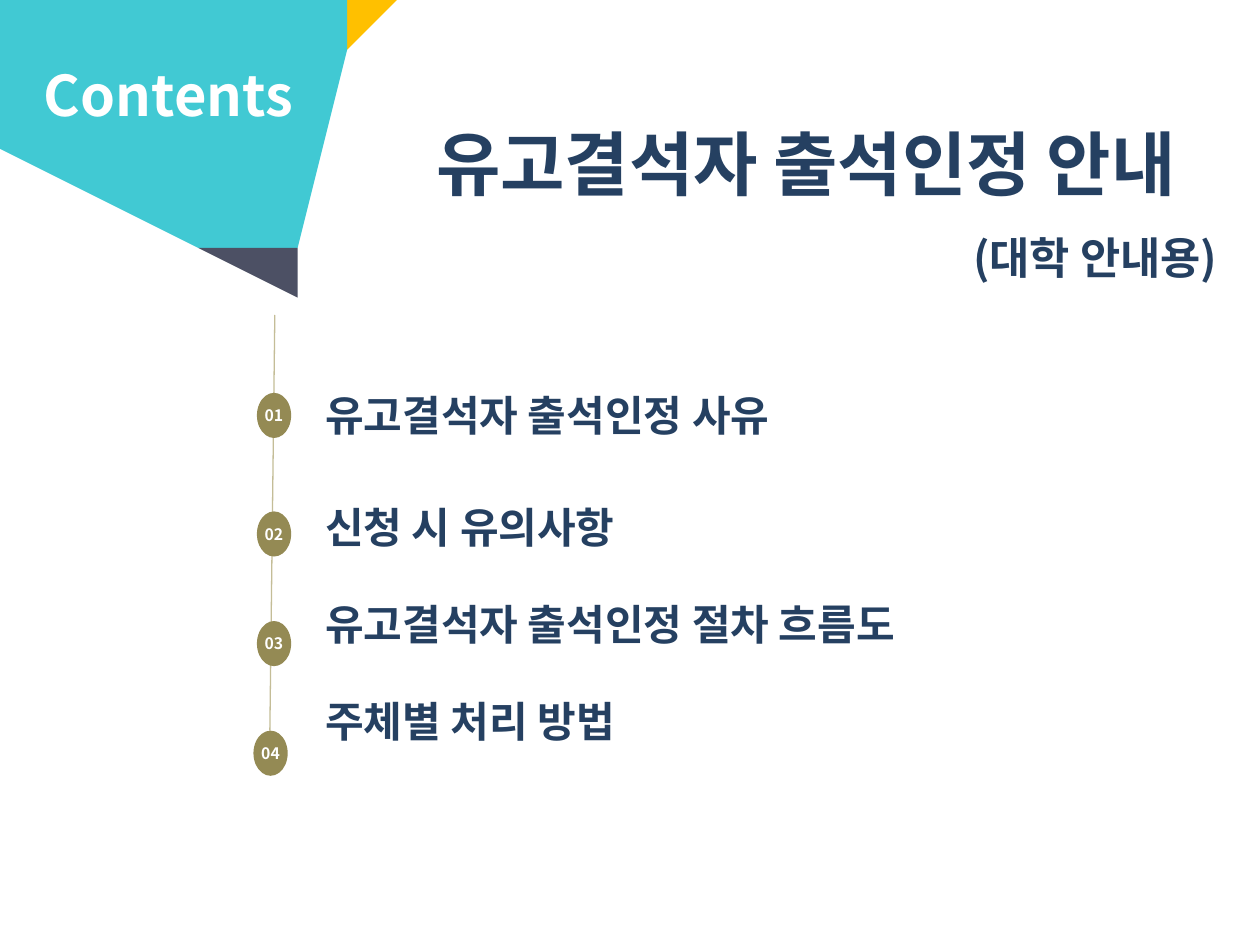
from lxml.etree import SubElement
from pptx import Presentation
from pptx.dml.color import RGBColor as RGB
from pptx.enum.shapes import MSO_CONNECTOR as Conn, MSO_SHAPE as Shape
from pptx.enum.text import MSO_ANCHOR as Anchor, MSO_AUTO_SIZE as Auto, PP_ALIGN as Align
from pptx.oxml.ns import qn
from pptx.util import Cm, Pt

# Content
HEAD = "Contents"
TITLE = "유고결석자 출석인정 안내"
NOTE = "(대학 안내용)"
# text, top of the text line, left and top of its badge (cm)
ITEMS = [
    ("유고결석자 출석인정 사유", 7.72, 5.18, 7.92),
    ("신청 시 유의사항", 10.19, 5.18, 10.31),
    ("유고결석자 출석인정 절차 흐름도", 12.37, 5.18, 12.52),
    ("주체별 처리 방법", 14.53, 5.11, 14.73),
]
# colour key, corner points (cm)
FACETS = [
    ("gold", [(6.65, 0), (7.62, 0), (7.19, 1.27)]),
    ("teal", [(0, 0), (6.53, 0), (7.14, 1.42), (5.87, 5.33), (3.73, 5.33), (0, 3.18)]),
    ("slate", [(3.96, 5.46), (5.84, 5.46), (5.54, 6.35)]),
]

THEME = {
    "gold": "FFC000", "teal": "41C9D3", "slate": "4C5064", "sand": "C4BD97",
    "olive": "948A54", "navy": "254061", "white": "FFFFFF",
    "font": "Noto Sans CJK KR", "plain": "Arial",
    "title": 40, "head": 32, "note": 25, "item": 24, "badge": 9,
}
ROW = 1.23  # height of one list line, cm
BADGE = (0.69, 0.91)


def color(key):
    return RGB.from_string(THEME[key])


def write(para, text, size, tone="navy", font="font", align=Align.LEFT, line=1.0, gap=0):
    """Put formatted text, without a bullet, in a paragraph."""
    para.alignment, para.line_spacing = align, line
    para.space_before, para.space_after = Cm(gap), Cm(0)
    prop = para._p.get_or_add_pPr()
    prop.set("marL", "0")
    prop.set("indent", "0")
    SubElement(prop, qn("a:buNone"))
    run = para.add_run()
    run.text = text
    face = run.font
    face.size, face.bold, face.name = Pt(THEME[size]), True, THEME[font]
    face.color.rgb = color(tone)
    if font == "font":
        SubElement(run._r.get_or_add_rPr(), qn("a:ea"), typeface=THEME[font])


def place(shape, left, top, width, height):
    shape.left, shape.top = Cm(left), Cm(top)
    shape.width, shape.height = Cm(width), Cm(height)
    frame = shape.text_frame
    frame.word_wrap, frame.auto_size = True, Auto.NONE
    frame.vertical_anchor = Anchor.TOP
    return frame


def paint(shape, key):
    shape.shadow.inherit = False
    shape.fill.solid()
    shape.fill.fore_color.rgb = color(key)
    shape.line.fill.background()


def main():
    deck = Presentation()
    deck.slide_width, deck.slide_height = Cm(25.4), Cm(19.05)
    slide = deck.slides.add_slide(deck.slide_layouts[1])
    shapes = slide.shapes

    # Guide line behind the badges
    guide = shapes.add_connector(Conn.STRAIGHT, Cm(5.54), Cm(6.35), Cm(5.44), Cm(14.73))
    guide.line.color.rgb = color("sand")
    guide.line.width = Pt(0.75)
    SubElement(guide._element.spPr, qn("a:effectLst"))

    # Corner facets
    group = shapes.add_group_shape()
    for key, points in FACETS:
        pen = group.shapes.build_freeform(*points[0], scale=Cm(1))
        pen.add_line_segments(points[1:], close=True)
        paint(pen.convert_to_shape(), key)

    # Heading on the facet
    frame = place(shapes.add_textbox(0, 0, 0, 0), 0.1, 1.09, 6.6, 1.63)
    write(frame.paragraphs[0], HEAD, "head", tone="white", align=Align.CENTER)

    # Title
    frame = place(shapes.title, 7.7, 1.45, 17.09, 4.67)
    write(frame.paragraphs[0], TITLE, "title", align=Align.CENTER, line=1.5)
    write(frame.add_paragraph(), NOTE, "note", align=Align.RIGHT, line=1.5)

    # List and numbered badges
    start = ITEMS[0][1]
    frame = place(slide.placeholders[1], 6.3, start, 18.21, ITEMS[-1][1] - start + 1.5)
    last = start - ROW
    for num, (text, top, left, high) in enumerate(ITEMS, 1):
        para = frame.paragraphs[0] if num == 1 else frame.add_paragraph()
        write(para, text, "item", font="plain", gap=top - last - ROW)
        last = top

        badge = shapes.add_shape(Shape.OVAL, 0, 0, 0, 0)
        paint(badge, "olive")
        label = place(badge, left, high, *BADGE)
        label.vertical_anchor = Anchor.MIDDLE
        label.margin_left = label.margin_right = label.margin_top = label.margin_bottom = 0
        write(label.paragraphs[0], f"{num:02}", "badge", tone="white", align=Align.CENTER)

    deck.save("out.pptx")


if __name__ == "__main__":
    main()
